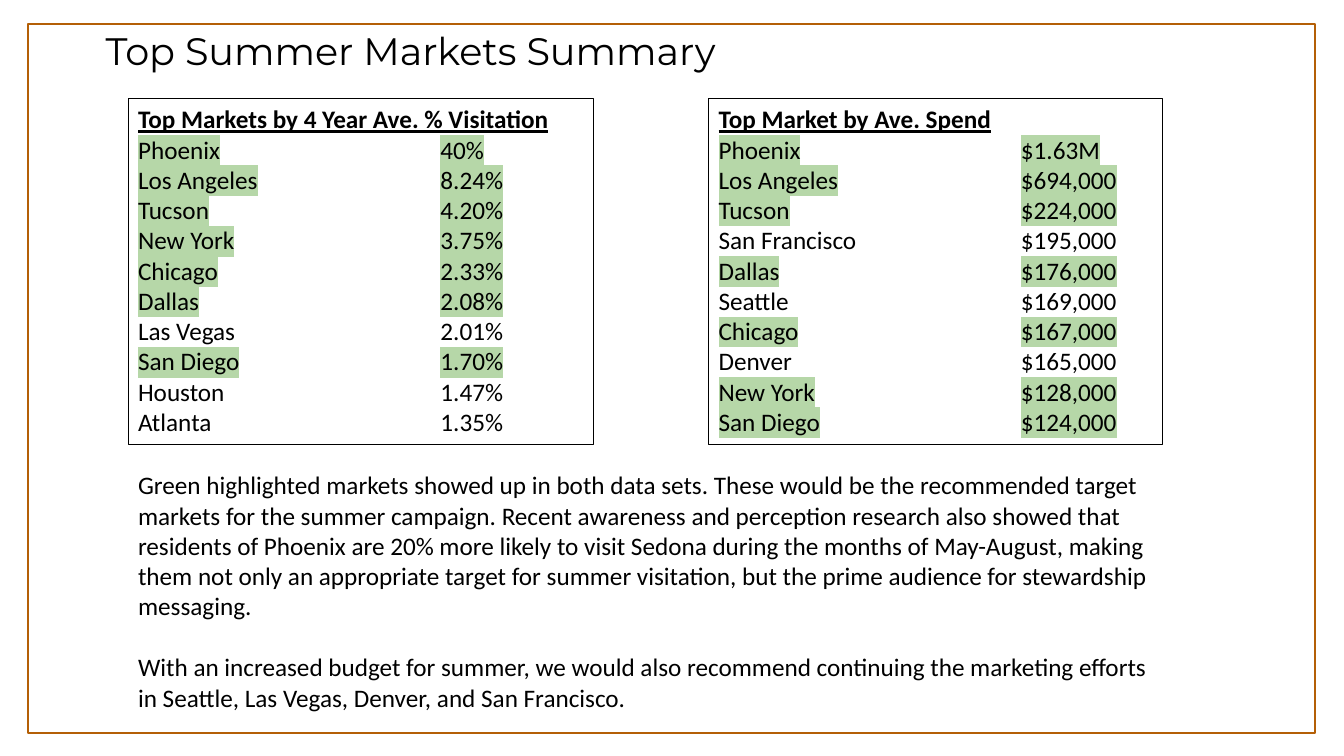
from lxml.etree import SubElement
from pptx import Presentation
from pptx.dml.color import RGBColor
from pptx.enum.shapes import MSO_SHAPE
from pptx.enum.text import MSO_ANCHOR, PP_ALIGN
from pptx.oxml.ns import qn
from pptx.util import Cm, Pt

BLACK, RUST, GREEN = "000000", "B45F06", "B6D7A8"
BODY = {"name": "Calibri", "size": Pt(18), "bold": False, "underline": False}
HEAD = {**BODY, "bold": True, "underline": True}
TITLE = {**BODY, "name": "Montserrat", "size": Pt(27.3)}

VISITS = {
    "Phoenix": "40%", "Los Angeles": "8.24%", "Tucson": "4.20%",
    "New York": "3.75%", "Chicago": "2.33%", "Dallas": "2.08%",
    "Las Vegas": "2.01%", "San Diego": "1.70%", "Houston": "1.47%",
    "Atlanta": "1.35%",
}
SPEND = {
    "Phoenix": "$1.63M", "Los Angeles": "$694,000", "Tucson": "$224,000",
    "San Francisco": "$195,000", "Dallas": "$176,000", "Seattle": "$169,000",
    "Chicago": "$167,000", "Denver": "$165,000", "New York": "$128,000",
    "San Diego": "$124,000",
}
NOTES = [
    "Green highlighted markets showed up in both data sets. These would be "
    "the recommended target markets for the summer campaign. Recent awareness "
    "and perception research also showed that residents of Phoenix are 20% "
    "more likely to visit Sedona during the months of May-August, making them "
    "not only an appropriate target for summer visitation, but the prime "
    "audience for stewardship messaging.",
    "With an increased budget for summer, we would also recommend continuing "
    "the marketing efforts in Seattle, Las Vegas, Denver, and San Francisco.",
]


def paint(color, hue):
    color.rgb = RGBColor.from_string(hue)


def add_run(para, text, style):
    run = para.add_run()
    run.text = text
    for key, value in style.items():
        setattr(run.font, key, value)
    run.font.fill.solid()
    paint(run.font.fill.fore_color, BLACK)
    return run


def mark(run):
    """Highlight a run in green; the schema wants this right after the fill."""
    props = run._r.get_or_add_rPr()
    light = SubElement(props, qn("a:highlight"))
    SubElement(light, qn("a:srgbClr"), val=GREEN)
    props.find(qn("a:solidFill")).addnext(light)


def set_tab(para, place):
    tabs = SubElement(para._p.get_or_add_pPr(), qn("a:tabLst"))
    SubElement(tabs, qn("a:tab"), pos=str(place), algn="l")


def add_box(slide, area, hue, width):
    box = slide.shapes.add_shape(MSO_SHAPE.RECTANGLE, *map(Cm, area))
    box.shadow.inherit = False
    box.fill.background()
    paint(box.line.color, hue)
    box.line.width = Pt(width)
    return box


def add_text(slide, area, texts, style, anchor=MSO_ANCHOR.TOP, gap=0, pitch=1.0):
    frame = slide.shapes.add_textbox(*map(Cm, area)).text_frame
    frame.word_wrap = True
    frame.vertical_anchor = anchor
    for i, text in enumerate(texts):
        para = frame.add_paragraph() if i else frame.paragraphs[0]
        para.line_spacing = pitch
        para.space_before = Pt(gap if i else 0)
        add_run(para, text, style)


def add_list(slide, area, head, rows, shared):
    """Boxed list of markets and values, with the shared markets marked."""
    frame = add_box(slide, area, BLACK, 0.75).text_frame
    frame.word_wrap = True
    frame.vertical_anchor = MSO_ANCHOR.TOP
    first = frame.paragraphs[0]
    first.alignment = PP_ALIGN.LEFT
    add_run(first, head, HEAD)
    for city, value in rows.items():
        para = frame.add_paragraph()
        para.alignment = PP_ALIGN.LEFT
        set_tab(para, Cm(7.62))
        runs = [add_run(para, text, BODY) for text in (city, "\t", value)]
        if city in shared:
            for run in runs[::2]:
                mark(run)


def main():
    deck = Presentation()
    deck.slide_width, deck.slide_height = Cm(33.87), Cm(19.05)
    slide = deck.slides.add_slide(deck.slide_layouts[6])
    shared = VISITS.keys() & SPEND.keys()

    add_box(slide, (0.71, 0.61, 32.44, 17.86), RUST, 1.5)
    add_text(slide, (2.41, 0.38, 17.7, 1.91), ["Top Summer Markets Summary"],
             TITLE, MSO_ANCHOR.MIDDLE, pitch=0.9)
    add_list(slide, (17.86, 2.49, 11.43, 8.71),
             "Top Market by Ave. Spend", SPEND, shared)
    add_text(slide, (3.23, 11.71, 26.06, 6.4), NOTES, BODY, gap=22)
    add_list(slide, (3.23, 2.49, 11.73, 8.71),
             "Top Markets by 4 Year Ave. % Visitation", VISITS, shared)
    deck.save("out.pptx")


if __name__ == "__main__":
    main()
